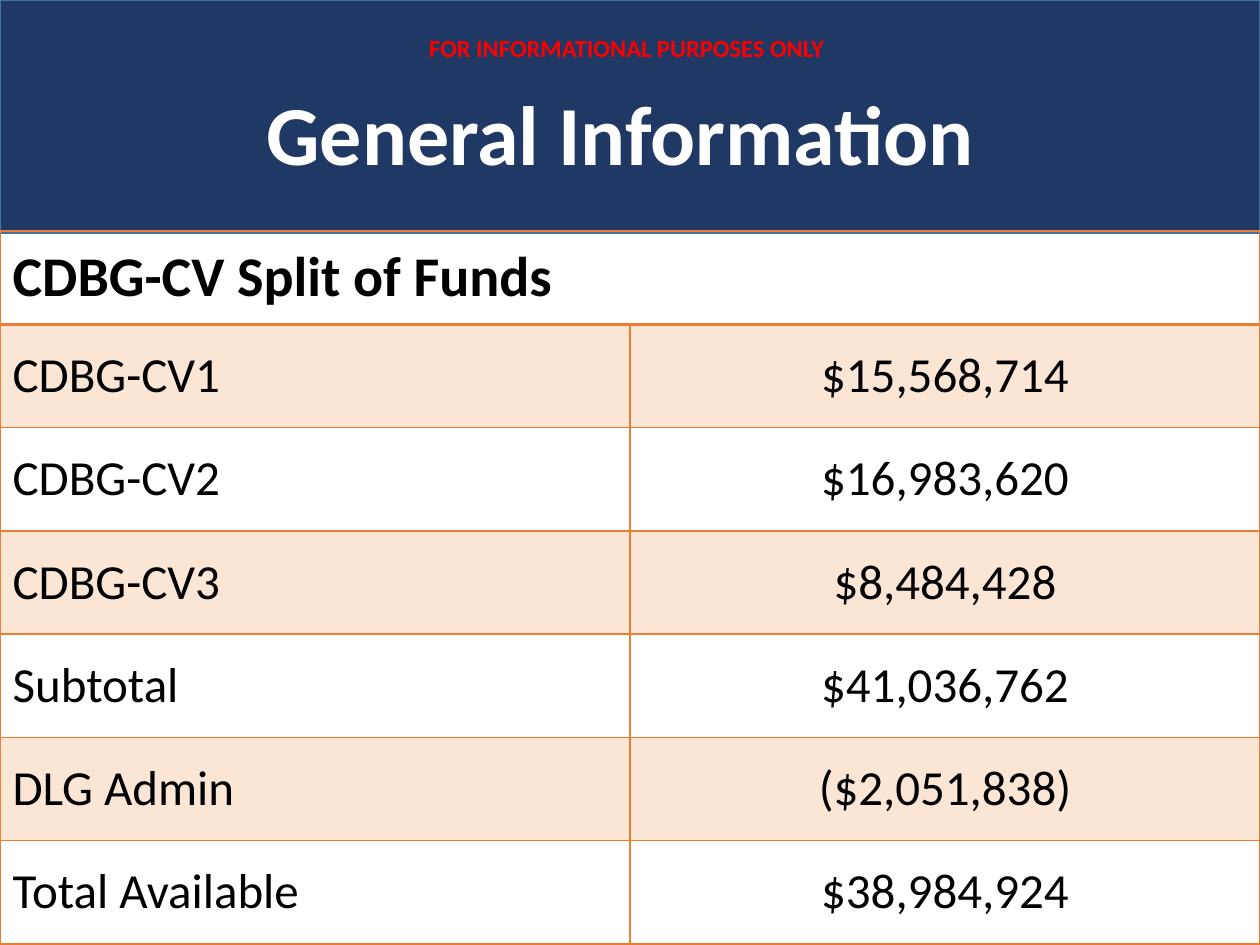
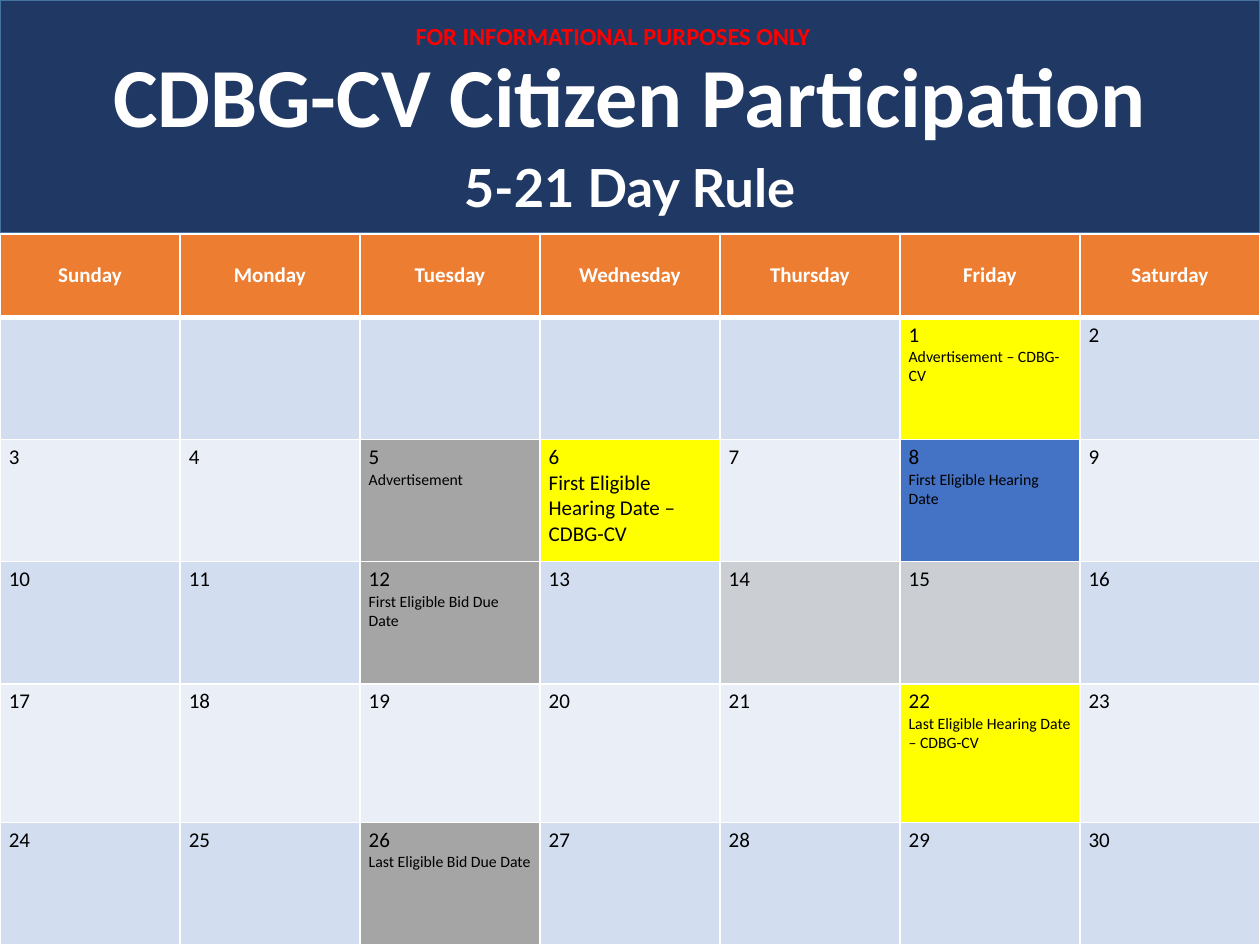
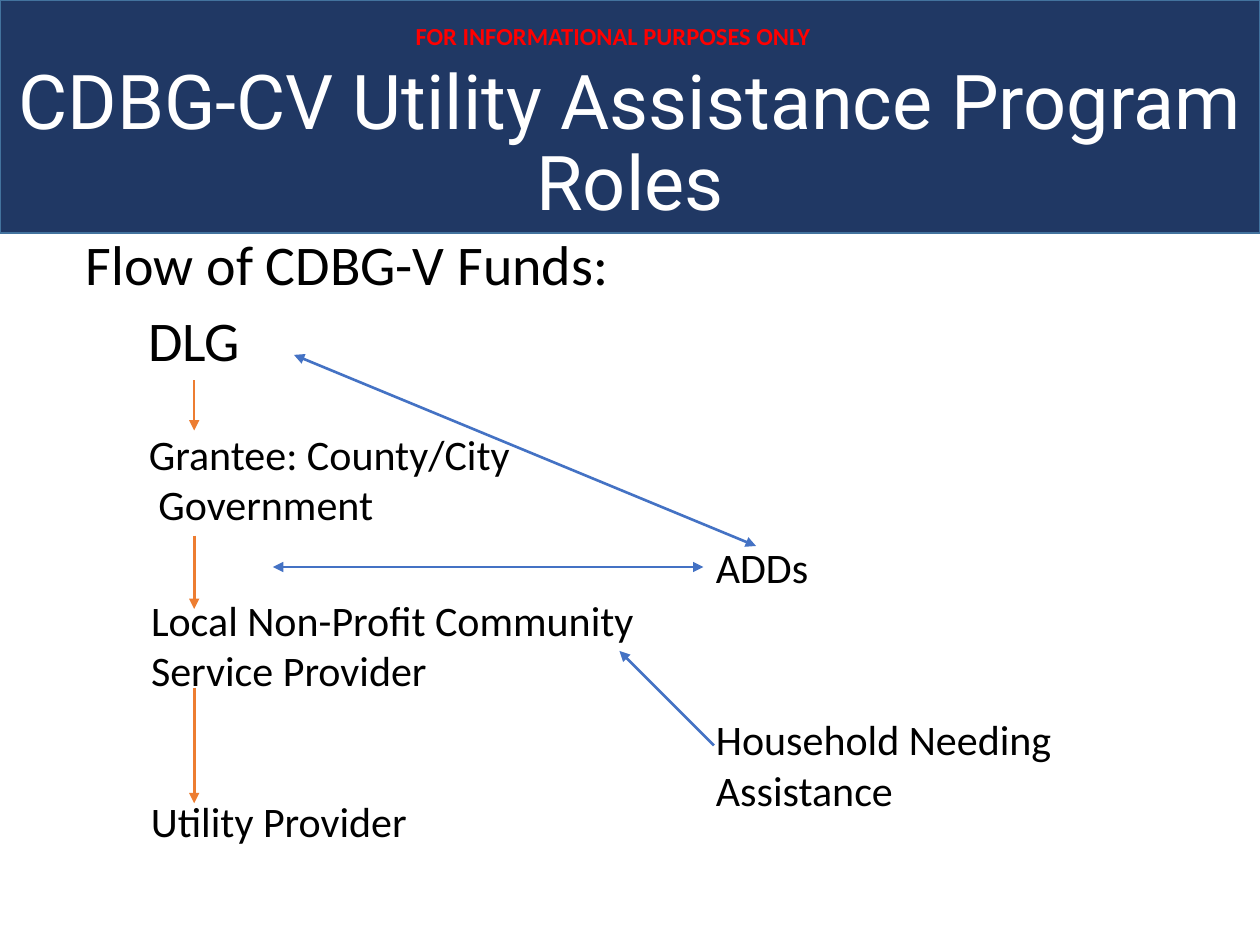
from lxml import etree
from pptx import Presentation
from pptx.dml.color import RGBColor
from pptx.enum.shapes import MSO_CONNECTOR as Connector, MSO_SHAPE as Preset
from pptx.enum.text import MSO_ANCHOR as Anchor, MSO_AUTO_SIZE as AutoSize, PP_ALIGN as Align
from pptx.oxml.ns import qn
from pptx.util import Emu, Inches, Pt

COLUMNS, ROWS = 120, 90
NAVY, STEEL, ORANGE, BLUE = "203864", "43739E", "ED7D31", "4472C4"
WHITE, BLACK, RED, YELLOW, GRAY = "FFFFFF", "000000", "FF0000", "FFFF00", "A5A5A5"
SILVER, BANDS = "CBCED3", ("D2DEEF", "EAEFF7")
FONT = "Calibri"

FUNDS = [
    ("CDBG-CV1", "$15,568,714"),
    ("CDBG-CV2", "$16,983,620"),
    ("CDBG-CV3", "$8,484,428"),
    ("Subtotal", "$41,036,762"),
    ("DLG Admin", "($2,051,838)"),
    ("Total Available", "$38,984,924"),
]
WEEKDAYS = ["Sunday", "Monday", "Tuesday", "Wednesday", "Thursday", "Friday", "Saturday"]
FIRST_WEEKDAY, LAST_DAY = 5, 30
EVENTS = {
    1: ("Advertisement – CDBG-CV", 9, YELLOW),
    5: ("Advertisement", 9, GRAY),
    6: ("First Eligible Hearing Date – CDBG-CV", 12, YELLOW),
    8: ("First Eligible Hearing Date", 9, BLUE),
    12: ("First Eligible Bid Due Date", 9, GRAY),
    14: (None, 9, SILVER),
    15: (None, 9, SILVER),
    22: ("Last Eligible Hearing Date – CDBG-CV", 9, YELLOW),
    26: ("Last Eligible Bid Due Date", 9, GRAY),
}


def rgb(value):
    return RGBColor.from_string(value)


class Deck:
    def __init__(self):
        self.presentation = Presentation()
        self.presentation.slide_width = Inches(10)
        self.presentation.slide_height = Inches(7.5)
        self.slide = None

    def x(self, columns):
        return Emu(round(self.presentation.slide_width * columns / COLUMNS))

    def y(self, rows):
        return Emu(round(self.presentation.slide_height * rows / ROWS))

    def place(self, left, top, width, height):
        return self.x(left), self.y(top), self.x(width), self.y(height)

    def new_slide(self):
        self.slide = self.presentation.slides.add_slide(self.presentation.slide_layouts[6])
        band = self.slide.shapes.add_shape(Preset.RECTANGLE, *self.place(0, 0, COLUMNS, 22.2))
        band.shadow.inherit = False
        band.fill.solid()
        band.fill.fore_color.rgb = rgb(NAVY)
        band.line.color.rgb = rgb(STEEL)
        band.line.width = Pt(1)

    def add_text(self, paragraph, text, size, color=BLACK, bold=False, font=FONT, align=Align.LEFT):
        paragraph.alignment = align
        for index, line in enumerate(text.split("\n")):
            if index:
                paragraph.add_line_break()
            run = paragraph.add_run()
            run.text = line
            run.font.name = font
            run.font.size = Pt(size)
            run.font.bold = bold
            run.font.color.rgb = rgb(color)

    def text(self, box, text, size, anchor=Anchor.TOP, spacing=None, grow=False, **style):
        shape = self.slide.shapes.add_textbox(*self.place(*box))
        frame = shape.text_frame
        frame.word_wrap = True
        frame.auto_size = AutoSize.SHAPE_TO_FIT_TEXT if grow else AutoSize.NONE
        frame.vertical_anchor = anchor
        paragraph = frame.paragraphs[0]
        if spacing:
            paragraph.line_spacing = spacing
        self.add_text(paragraph, text, size, **style)
        return shape

    def title(self, text, top):
        self.text((3.5, top, 113, 11.9), text, 48, Anchor.MIDDLE,
                  color=WHITE, bold=True, align=Align.CENTER)

    def notice(self, left=38.4, top=1.4):
        self.text((left, top, 40.6, 4.8), "FOR INFORMATIONAL PURPOSES ONLY", 14,
                  color=RED, bold=True)

    def label(self, box, text, size=24, **style):
        return self.text(box, text, size, grow=True, **style)

    def table(self, top, column_count, heights):
        frame = self.slide.shapes.add_table(
            len(heights), column_count, *self.place(0, top, COLUMNS, sum(heights)))
        table = frame.table
        table.first_row = table.horz_banding = False
        for column in table.columns:
            column.width = self.x(COLUMNS / column_count)
        for row, height in zip(table.rows, heights):
            row.height = self.y(height)
        return table

    def cell(self, cell, border, top=1, bottom=1, fill=None, opacity=None,
             anchor=Anchor.MIDDLE, insets=None):
        properties = cell._tc.get_or_add_tcPr()
        for side, width in (("L", 1), ("R", 1), ("T", top), ("B", bottom)):
            line = etree.SubElement(properties, qn(f"a:ln{side}"), w=str(Pt(width)))
            solid = etree.SubElement(line, qn("a:solidFill"))
            etree.SubElement(solid, qn("a:srgbClr"), val=border)
        if fill:
            cell.fill.solid()
            cell.fill.fore_color.rgb = rgb(fill)
        else:
            cell.fill.background()
        if opacity:
            color = properties.find(qn("a:solidFill")).find(qn("a:srgbClr"))
            etree.SubElement(color, qn("a:alpha"), val=str(opacity * 1000))
        cell.vertical_anchor = anchor
        if insets:
            cell.margin_left = cell.margin_right = Inches(insets[0])
            cell.margin_top = cell.margin_bottom = Inches(insets[1])
        return cell.text_frame

    def arrow(self, start, end, color, width=1.5, both=False, source=None):
        connector = self.slide.shapes.add_connector(
            Connector.STRAIGHT, self.x(start[0]), self.y(start[1]), self.x(end[0]), self.y(end[1]))
        if source:
            connector.begin_connect(*source)
        connector.line.color.rgb = rgb(color)
        connector.line.width = Pt(width)
        line = connector.line._get_or_add_ln()
        for tag in ("a:headEnd", "a:tailEnd") if both else ("a:tailEnd",):
            etree.SubElement(line, qn(tag), type="triangle")
        etree.SubElement(connector._element.spPr, qn("a:effectLst"))


def general_information(deck):
    deck.new_slide()
    deck.title("General Information ", 6.6)
    table = deck.table(22, 2, [8.88] + [9.84] * len(FUNDS))
    for column in range(2):
        header = deck.cell(table.cell(0, column), ORANGE, bottom=2)
        if column == 0:
            deck.add_text(header.paragraphs[0], "CDBG-CV Split of Funds", 32, bold=True)
    table.cell(0, 0).merge(table.cell(0, 1))
    for row, values in enumerate(FUNDS, 1):
        shade = {"fill": ORANGE, "opacity": 20} if row % 2 else {}
        for column, value in enumerate(values):
            frame = deck.cell(table.cell(row, column), ORANGE, top=2 if row == 1 else 1, **shade)
            deck.add_text(frame.paragraphs[0], value, 28,
                          align=Align.CENTER if column else Align.LEFT)
    deck.notice(39.7, 2.6)


def citizen_participation(deck):
    deck.new_slide()
    deck.text((7.1, 14.9, 105.7, 9.1), "5-21 Day Rule", 30, spacing=0.9,
              color=WHITE, bold=True, font="Lato", align=Align.CENTER)
    calendar = deck.table(22.3, len(WEEKDAYS), [7.92, 11.64, 11.64, 11.64, 13.2, 11.64])
    insets = (0.07, 0.04)
    for column, weekday in enumerate(WEEKDAYS):
        frame = deck.cell(calendar.cell(0, column), WHITE, bottom=3, fill=ORANGE, insets=insets)
        deck.add_text(frame.paragraphs[0], weekday, 12, WHITE, True, align=Align.CENTER)
    for position in range(FIRST_WEEKDAY + LAST_DAY):
        week, column = divmod(position, len(WEEKDAYS))
        day = position - FIRST_WEEKDAY + 1
        event, size, fill = EVENTS.get(day, (None, 9, BANDS[week % 2]))
        frame = deck.cell(calendar.cell(week + 1, column), WHITE, top=1 if week else 3,
                          fill=fill, anchor=Anchor.TOP, insets=insets)
        if day > 0:
            deck.add_text(frame.paragraphs[0], str(day), 12)
        if event:
            deck.add_text(frame.add_paragraph(), event, size)
    deck.title("CDBG-CV Citizen Participation", 3)
    deck.notice()


def utility_assistance(deck):
    deck.new_slide()
    deck.text((0, 8.5, COLUMNS, 10.7), "CDBG-CV Utility Assistance Program Roles", 43.2,
              Anchor.MIDDLE, 0.9, color=WHITE, font="Roboto", align=Align.CENTER)
    deck.text((7, 22, 93, 64), "Flow of CDBG-V Funds:", 32, spacing=0.9)
    dlg = deck.label((11, 28.5, 15, 7.7), "DLG", 32, align=Align.CENTER)
    deck.label((13, 40.2, 37, 10.9), "Grantee: County/City\n Government")
    deck.label((67, 67.4, 37, 10.9), "Household Needing Assistance")
    deck.label((13.2, 56, 52.2, 10.9), "Local Non-Profit Community Service Provider")
    deck.label((13.2, 75.2, 37, 6), "Utility Provider")
    adds = deck.label((67, 51, 37, 6), "ADDs")
    deck.arrow((18.5, 36.2), (18.5, 41), ORANGE, 1, source=(dlg, 2))
    deck.arrow((67, 54), (26, 54), BLUE, both=True, source=(adds, 1))
    deck.arrow((72, 52), (28, 33.8), BLUE, both=True)
    for top, bottom in ((51, 58), (65.5, 76.5)):
        deck.arrow((18.5, top), (18.5, bottom), ORANGE)
    deck.arrow((68, 71), (59, 62), BLUE)
    deck.notice()


def main():
    deck = Deck()
    general_information(deck)
    citizen_participation(deck)
    utility_assistance(deck)
    deck.presentation.save("out.pptx")


if __name__ == "__main__":
    main()
